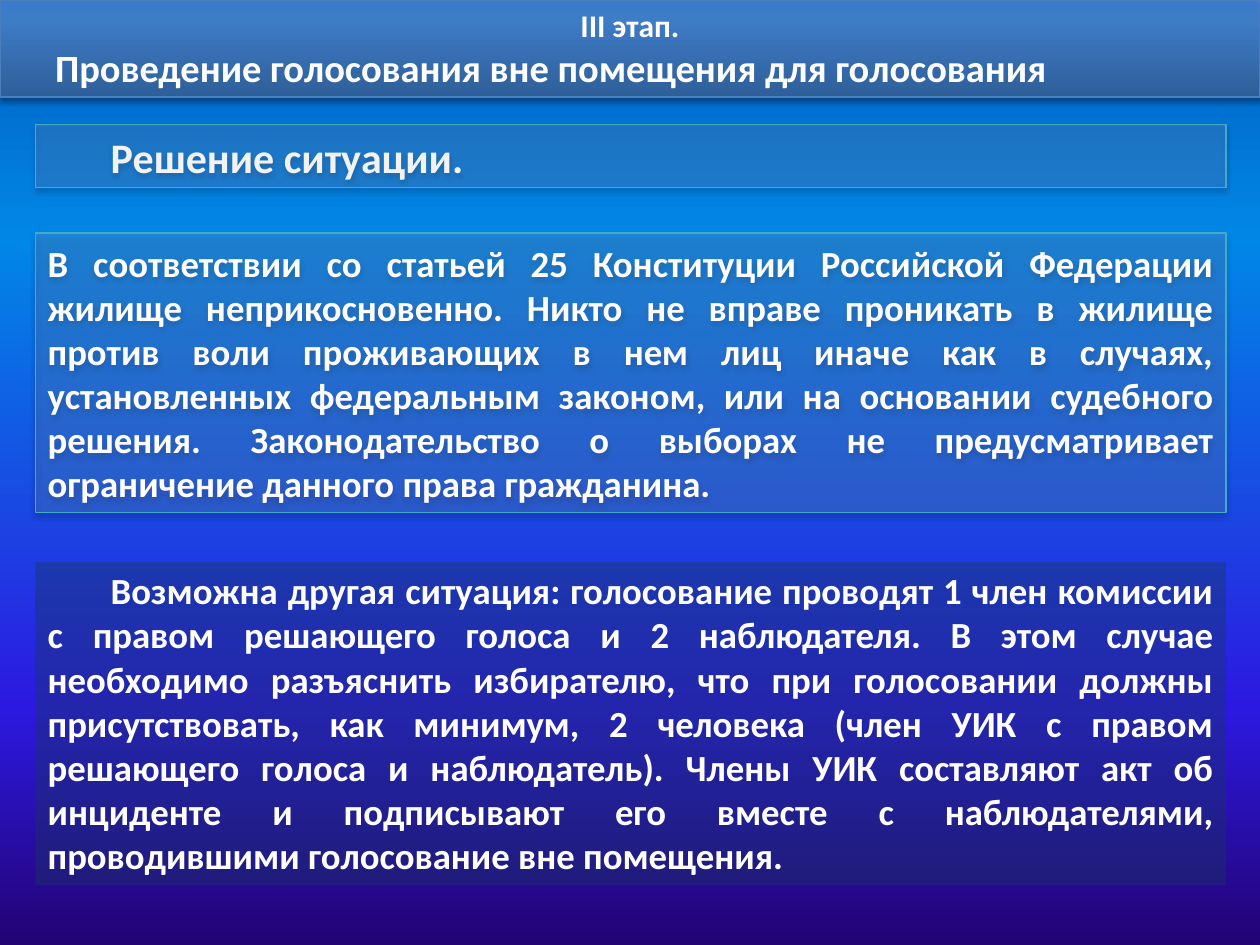
from lxml.etree import SubElement
from pptx import Presentation
from pptx.dml.color import RGBColor
from pptx.enum.shapes import MSO_SHAPE
from pptx.enum.text import MSO_ANCHOR, MSO_AUTO_SIZE, PP_ALIGN
from pptx.oxml.ns import qn
from pptx.util import Inches, Pt

COLORS = {
    "white": "FFFFFF", "pale": "F2F2F2", "black": "000000",
    "panel": "558ED5", "panel_line": "46AAC5",
    "note": "17375E", "title_line": "4B7EBC",
}
PAGE_STOPS = [(0, "230373"), (25, "2C19E1"), (75, "0087E6"), (100, "005CBF")]
TITLE_STOPS = [(0, "2F5F99"), (80, "3D7CC7"), (100, "3A7CCB")]

MARGIN, PANEL_WIDTH = 0.28, 9.45
FIRST_LINE = Inches(0.5)
JUSTIFIED = {"alignment": PP_ALIGN.JUSTIFY}
SPACED = {**JUSTIFIED, "space_before": Pt(6), "space_after": Pt(6)}

# Each paragraph: text, size, colour, paragraph format, first-line indent
BOXES = [
    {"at": (MARGIN, 1.85, PANEL_WIDTH, 2.22), "fill": "panel", "alpha": 33,
     "line": "panel_line", "anchor": MSO_ANCHOR.MIDDLE,
     "paras": [("В соответствии со статьей 25 Конституции Российской Федерации "
                "жилище неприкосновенно. Никто не вправе проникать в жилище "
                "против воли проживающих в нем лиц иначе как в случаях, "
                "установленных федеральным законом, или на основании судебного "
                "решения. Законодательство о выборах не предусматривает "
                "ограничение данного права гражданина.",
                21, "white", SPACED, 0)]},
    {"at": (MARGIN, 0.99, PANEL_WIDTH, 0.5), "fill": "panel", "alpha": 33,
     "line": "panel_line", "anchor": MSO_ANCHOR.MIDDLE,
     "paras": [("Решение ситуации.", 24, "pale", JUSTIFIED, FIRST_LINE)]},
    {"at": (0, 0, 10, 0.77), "stops": TITLE_STOPS,
     "line": "title_line", "anchor": MSO_ANCHOR.TOP,
     "paras": [("III этап.", 18, "white", {"alignment": PP_ALIGN.CENTER}, 0),
               ("Проведение голосования вне помещения для голосования",
                22, "white", {"alignment": PP_ALIGN.LEFT}, Inches(0.34))]},
    {"at": (MARGIN, 4.46, PANEL_WIDTH, 2.57), "fill": "note", "alpha": 40,
     "line": None, "anchor": MSO_ANCHOR.TOP,
     "paras": [("Возможна другая ситуация: голосование проводят 1 член комиссии "
                "с правом решающего голоса и 2 наблюдателя. В этом случае "
                "необходимо разъяснить избирателю, что при голосовании должны "
                "присутствовать, как минимум, 2 человека (член УИК с правом "
                "решающего голоса и наблюдатель). Члены УИК составляют акт об "
                "инциденте и подписывают его вместе с наблюдателями, "
                "проводившими голосование вне помещения.",
                21, "white", SPACED, FIRST_LINE)]},
]


def color(name):
    return RGBColor.from_string(COLORS[name])


def set_alpha(color_element, percent):
    SubElement(color_element, qn("a:alpha"), val=str(percent * 1000))


def fill_upward(owner, fill, stops):
    """Fill with a gradient whose first stop is at the bottom."""
    fill.gradient()
    fill.gradient_angle = 90
    stop_list = owner.element.xpath(".//a:gsLst")[0]
    for old_stop in list(stop_list):
        stop_list.remove(old_stop)
    for position, value in stops:
        stop = SubElement(stop_list, qn("a:gs"), pos=str(position * 1000))
        SubElement(stop, qn("a:srgbClr"), val=value)


def add_soft_shadow(shape):
    effects = shape.element.xpath("./p:spPr/a:effectLst")[0]
    shadow = SubElement(effects, qn("a:outerShdw"), blurRad=str(Pt(3.1)),
                        dist=str(Pt(1.8)), dir=str(90 * 60000), rotWithShape="0")
    set_alpha(SubElement(shadow, qn("a:srgbClr"), val=COLORS["black"]), 35)


def add_para(para, text, size, color_name, para_format, indent):
    for name, value in para_format.items():
        setattr(para, name, value)
    if indent:
        properties = para._p.get_or_add_pPr()
        properties.set("marL", "0")
        properties.set("indent", str(indent))
    span = para.add_run()
    span.text = text
    for name, value in {"name": "Calibri", "size": Pt(size), "bold": True}.items():
        setattr(span.font, name, value)
    span.font.color.rgb = color(color_name)


def add_box(page, box):
    shape = page.shapes.add_shape(MSO_SHAPE.RECTANGLE, *map(Inches, box["at"]))
    shape.shadow.inherit = False
    if "stops" in box:
        fill_upward(shape, shape.fill, box["stops"])
    else:
        shape.fill.solid()
        shape.fill.fore_color.rgb = color(box["fill"])
        set_alpha(shape.element.xpath("./p:spPr/a:solidFill/a:srgbClr")[0], box["alpha"])
    if box["line"]:
        shape.line.color.rgb = color(box["line"])
        shape.line.width = Pt(0.75)
        add_soft_shadow(shape)
    else:
        shape.line.fill.background()
    frame = shape.text_frame
    frame.word_wrap = True
    frame.auto_size = MSO_AUTO_SIZE.SHAPE_TO_FIT_TEXT
    frame.vertical_anchor = box["anchor"]
    for index, para in enumerate(box["paras"]):
        add_para(frame.add_paragraph() if index else frame.paragraphs[0], *para)


def main():
    deck = Presentation()
    deck.slide_width, deck.slide_height = Inches(10), Inches(7.5)
    page = deck.slides.add_slide(deck.slide_layouts[6])
    fill_upward(page, page.background.fill, PAGE_STOPS)
    for box in BOXES:
        add_box(page, box)
    deck.save("out.pptx")


if __name__ == "__main__":
    main()
